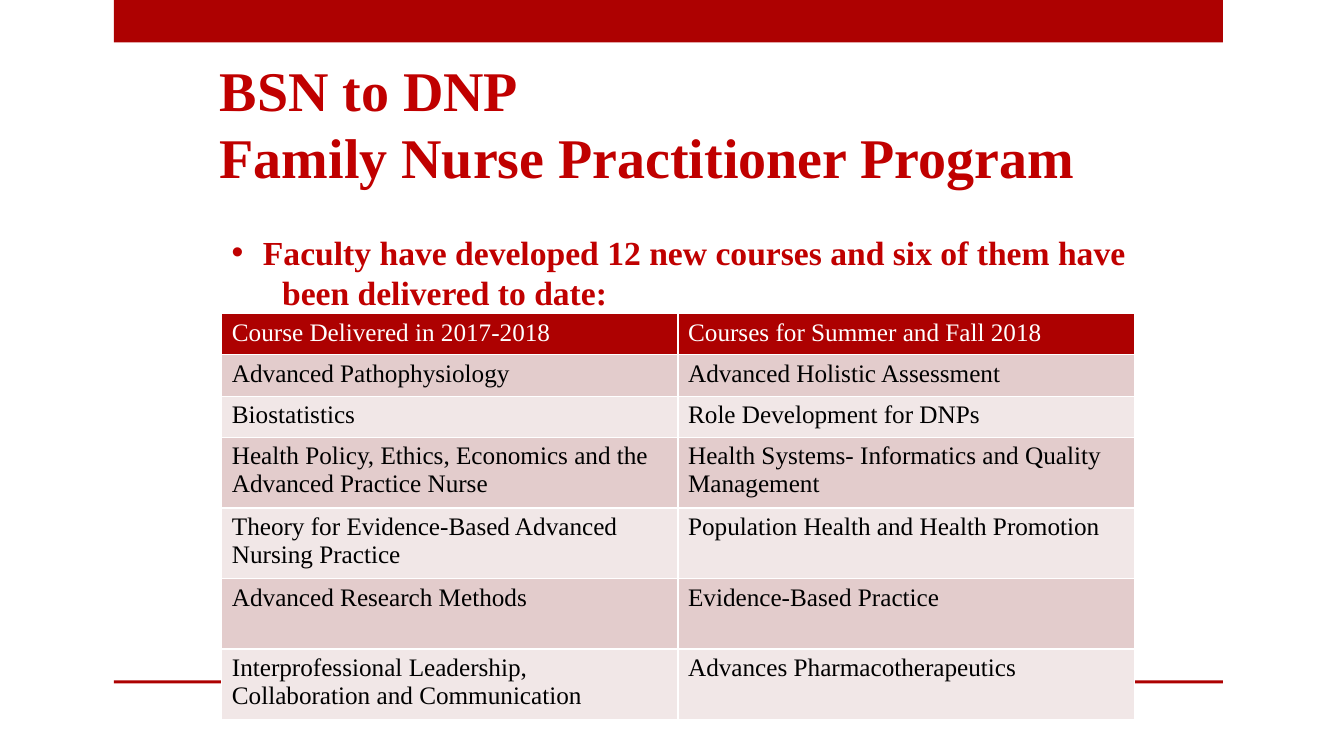
from dataclasses import dataclass

from lxml import etree
from pptx import Presentation
from pptx.dml.color import RGBColor
from pptx.enum.shapes import MSO_SHAPE
from pptx.enum.text import MSO_ANCHOR, MSO_AUTO_SIZE, PP_ALIGN
from pptx.oxml.ns import qn
from pptx.util import Inches, Pt

RECTANGLE = MSO_SHAPE.RECTANGLE
TOP = MSO_ANCHOR.TOP
NO_AUTOFIT = MSO_AUTO_SIZE.NONE
LEFT = PP_ALIGN.LEFT
TITLE_ONLY = 5


@dataclass(frozen=True)
class Theme:
    font: str = "Times New Roman"
    band: str = "AD0101"
    heading: str = "C00000"
    white: str = "FFFFFF"
    black: str = "000000"
    stripes: tuple = ("E3CCCC", "F1E7E7")
    title_size: int = 40
    lead_size: int = 24
    table_size: int = 18
    line_spacing: float = 1.0
    border_width: int = 1


THEME = Theme()

TITLE = ["BSN to DNP", "Family Nurse Practitioner Program"]
LEAD = ["Faculty have developed 12 new courses and six of them have",
        "been delivered to date:"]
COURSES = [
    ("Course Delivered in 2017-2018", "Courses for Summer and Fall 2018"),
    ("Advanced Pathophysiology", "Advanced Holistic Assessment"),
    ("Biostatistics", "Role Development for DNPs"),
    ("Health Policy, Ethics, Economics and the Advanced Practice Nurse",
     "Health Systems- Informatics and Quality Management"),
    ("Theory for Evidence-Based Advanced Nursing Practice",
     "Population Health and Health Promotion"),
    ("Advanced Research Methods", "Evidence-Based Practice"),
    ("Interprofessional Leadership, Collaboration and Communication",
     "Advances Pharmacotherapeutics"),
]
SINGLE_LINE_ROWS = 3


def style(paragraph, size, color, bold=False):
    font = paragraph.font
    font.name = THEME.font
    font.size = Pt(size)
    font.bold = bold
    font.color.rgb = RGBColor.from_string(color)


def fill_text(frame, lines):
    """Write heading lines, one paragraph each."""
    frame.word_wrap = True
    frame.auto_size = NO_AUTOFIT
    frame.vertical_anchor = TOP
    frame.text = "\n".join(lines)
    for paragraph in frame.paragraphs:
        paragraph.alignment = LEFT
        paragraph.line_spacing = THEME.line_spacing


def add_band(slide, left, top, width, height):
    band = slide.shapes.add_shape(
        RECTANGLE, Inches(left), Inches(top), Inches(width), Inches(height))
    band.shadow.inherit = False
    band.fill.solid()
    band.fill.fore_color.rgb = RGBColor.from_string(THEME.band)
    band.line.fill.background()


def add_frame(slide, left, width):
    """Top bar and footer rule."""
    add_band(slide, left, 0, width, 0.42)
    add_band(slide, left, 6.75, width, 0.03)


def place_title(slide, left, top, width, height):
    title = slide.shapes.title
    title.left, title.top = Inches(left), Inches(top)
    title.width, title.height = Inches(width), Inches(height)
    fill_text(title.text_frame, TITLE)
    for paragraph in title.text_frame.paragraphs:
        style(paragraph, THEME.title_size, THEME.heading, bold=True)


def set_indent(paragraph, margin, first_line=0.0, bullet=None):
    properties = paragraph._p.get_or_add_pPr()
    properties.set("marL", str(Inches(margin)))
    properties.set("indent", str(Inches(first_line)))
    if bullet:
        etree.SubElement(properties, qn("a:buFont")).set("typeface", "Arial")
        etree.SubElement(properties, qn("a:buChar")).set("char", bullet)


def add_lead(slide, left, top, width, height):
    lead = slide.shapes.add_textbox(
        Inches(left), Inches(top), Inches(width), Inches(height)).text_frame
    fill_text(lead, LEAD)
    statement, continuation = lead.paragraphs
    set_indent(statement, 0.31, -0.31, "•")
    set_indent(continuation, 0.5)
    for paragraph in lead.paragraphs:
        style(paragraph, THEME.lead_size, THEME.heading, bold=True)


def set_borders(cell):
    properties = cell._tc.get_or_add_tcPr()
    for side in ("a:lnL", "a:lnR", "a:lnT", "a:lnB"):
        line = etree.SubElement(properties, qn(side), w=str(Pt(THEME.border_width)))
        fill = etree.SubElement(line, qn("a:solidFill"))
        etree.SubElement(fill, qn("a:srgbClr"), val=THEME.white)


def add_courses(slide, left, top, width, height):
    table = slide.shapes.add_table(
        len(COURSES), len(COURSES[0]),
        Inches(left), Inches(top), Inches(width), Inches(height)).table
    for column in table.columns:
        column.width = Inches(width / len(COURSES[0]))
    for r, courses in enumerate(COURSES):
        table.rows[r].height = Inches(0.41 if r < SINGLE_LINE_ROWS else 0.7)
        background = THEME.stripes[(r - 1) % 2] if r else THEME.band
        text_color = THEME.black if r else THEME.white
        for c, course in enumerate(courses):
            cell = table.cell(r, c)
            cell.text = course
            style(cell.text_frame.paragraphs[0], THEME.table_size, text_color)
            set_borders(cell)
            cell.fill.solid()
            cell.fill.fore_color.rgb = RGBColor.from_string(background)


def main():
    deck = Presentation()
    deck.slide_width, deck.slide_height = Inches(13.33), Inches(7.5)
    slide = deck.slides.add_slide(deck.slide_layouts[TITLE_ONLY])
    add_frame(slide, 1.13, 11)
    place_title(slide, 2.08, 0.5, 8.92, 1.45)
    add_lead(slide, 2.2, 2.25, 9.16, 0.86)
    add_courses(slide, 2.2, 3.11, 9.05, 4.02)
    deck.save("out.pptx")


if __name__ == "__main__":
    main()
